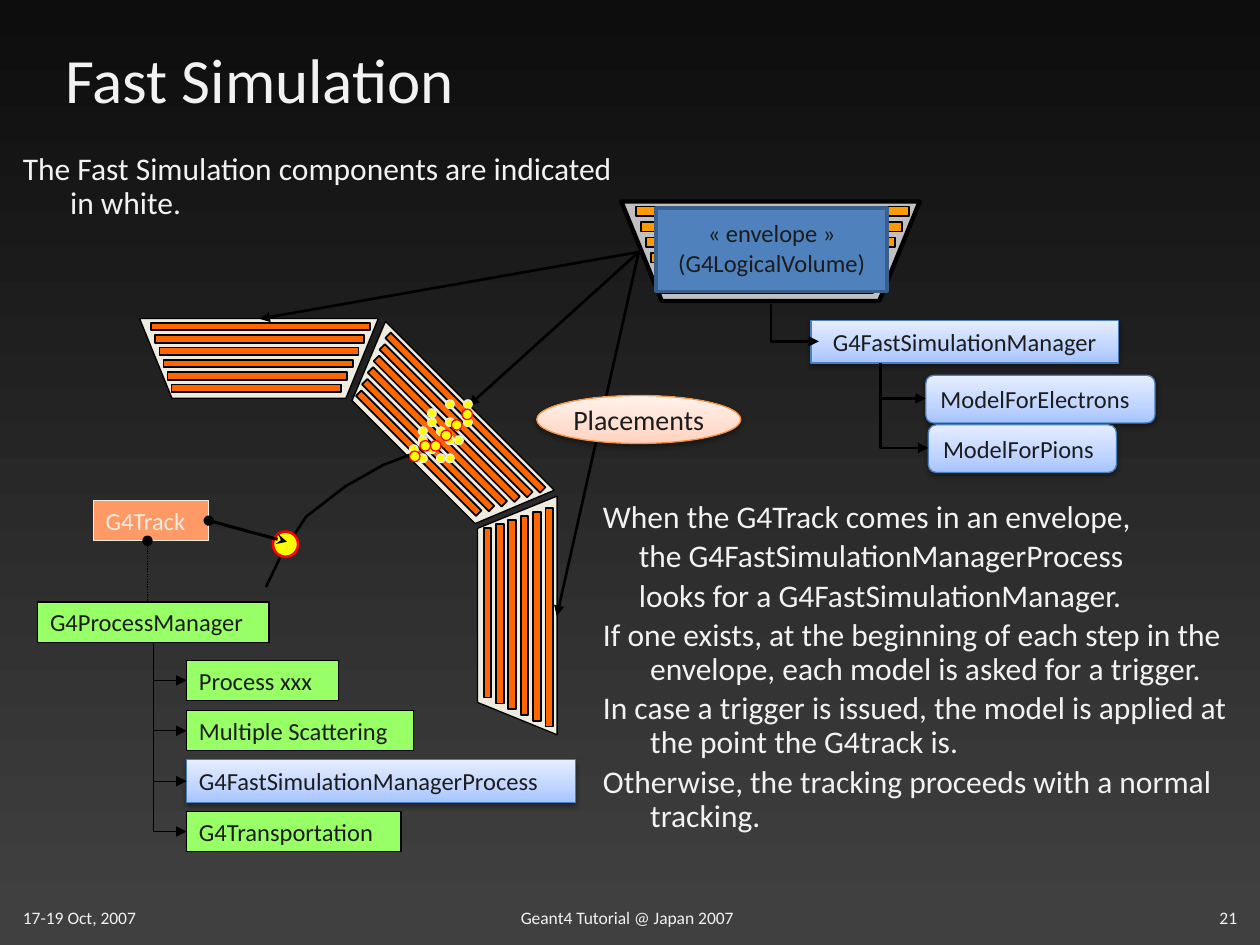
from copy import deepcopy
from dataclasses import dataclass
from math import cos, radians, sin

from pptx import Presentation
from pptx.dml.color import RGBColor
from pptx.enum.dml import MSO_LINE
from pptx.enum.shapes import MSO_CONNECTOR as Link, MSO_SHAPE as Preset
from pptx.enum.text import MSO_ANCHOR as Anchor, PP_ALIGN as Align
from pptx.oxml import parse_xml
from pptx.oxml.ns import nsdecls, qn
from pptx.util import Pt


@dataclass(frozen=True)
class Theme:
    font: str = "Calibri"
    light: str = "F2F2F2"
    dark: str = "1C1C1C"
    black: str = "000000"
    cream: str = "EEECE1"
    silver: str = "C0C0C0"
    orange: str = "FF6600"
    amber: str = "FF9900"
    salmon: str = "FF9966"
    green: str = "99FF66"
    yellow: str = "FFFF00"
    red: str = "FF0000"
    blue: str = "4F81BD"
    navy: str = "3A5F8C"
    model_edge: str = "4B7EBC"
    label_edge: str = "F69240"
    backdrop: tuple = ((3, "404040"), (100, "0D0D0D"))
    model_fill: tuple = ((0, "A4C4FF"), (35, "BFD4FF"), (100, "E6EEFF"))
    label_fill: tuple = ((0, "FFD2BD"), (35, "FFDED0"), (100, "FFF2ED"))
    title: int = 36
    body: int = 18
    label: int = 16
    box: int = 14
    footer: int = 10


THEME = Theme()
MODEL = dict(fill=THEME.model_fill, edge=THEME.model_edge)
PROCESS = dict(fill=THEME.green, edge=THEME.black)
SHADOW = (
    f'<a:effectLst {nsdecls("a")}><a:outerShdw blurRad="40000" dist="20000" dir="5400000" '
    'rotWithShape="0"><a:srgbClr val="000000"><a:alpha val="38000"/></a:srgbClr>'
    "</a:outerShdw></a:effectLst>"
)


def rgb(code):
    return RGBColor.from_string(code)


def paint_gradient(fill, owner, stops):
    """Fill with a bottom-to-top gradient of (percent, colour) stops."""
    fill.gradient()
    fill.gradient_angle = 90
    stop_list = next(owner.iter(qn("a:gsLst")))
    while len(stop_list) < len(stops):
        stop_list.insert(1, deepcopy(stop_list[0]))
    for stop, (percent, colour) in zip(fill.gradient_stops, stops):
        stop.position = percent / 100
        stop.color.rgb = rgb(colour)


def write(frame, *lines, size=THEME.body, colour=THEME.light, align=Align.LEFT,
          anchor=Anchor.TOP, insets=(7.2, 3.6), leading=None, gap=0, indents=None):
    """Write one paragraph per line; indents holds (margin, first line) pairs."""
    frame.word_wrap = True
    frame.vertical_anchor = anchor
    frame.margin_left = frame.margin_right = Pt(insets[0])
    frame.margin_top = frame.margin_bottom = Pt(insets[1])
    for index, line in enumerate(lines):
        paragraph = frame.add_paragraph() if index else frame.paragraphs[0]
        paragraph.alignment = align
        paragraph.line_spacing = leading
        if index:
            paragraph.space_before = Pt(gap)
        if indents:
            margin, first = indents[index]
            properties = paragraph._p.get_or_add_pPr()
            properties.set("marL", str(Pt(margin)))
            properties.set("indent", str(Pt(first)))
        run = paragraph.add_run()
        run.text = line
        run.font.name, run.font.size = THEME.font, Pt(size)
        run.font.color.rgb = rgb(colour)


def text_box(slide, left, top, width, height, *lines, **style):
    """Add plain text on the backdrop."""
    box = slide.shapes.add_textbox(Pt(left), Pt(top), Pt(width), Pt(height))
    write(box.text_frame, *lines, **style)


def finish(shape, fill, edge, weight):
    """Give a shape its fill and outline; gradient shapes cast a shadow."""
    shape.shadow.inherit = False
    if fill is None:
        shape.fill.background()
    elif isinstance(fill, str):
        shape.fill.solid()
        shape.fill.fore_color.rgb = rgb(fill)
    else:
        properties = shape._element.spPr
        paint_gradient(shape.fill, properties, fill)
        properties.replace(properties.find(qn("a:effectLst")), parse_xml(SHADOW))
    shape.line.color.rgb = rgb(edge)
    shape.line.width = Pt(weight)


def block(slide, left, top, width, height, *lines, preset=Preset.RECTANGLE,
          fill, edge, weight=0.75, **style):
    """Add a preset shape with optional text."""
    shape = slide.shapes.add_shape(preset, Pt(left), Pt(top), Pt(width), Pt(height))
    finish(shape, fill, edge, weight)
    if lines:
        write(shape.text_frame, *lines, **{
            "size": THEME.box, "colour": THEME.dark, "anchor": Anchor.MIDDLE, **style})
    return shape


def outline(slide, points, fill, edge, weight, closed):
    """Add a freeform through the given points."""
    corners = [(Pt(x), Pt(y)) for x, y in points]
    builder = slide.shapes.build_freeform(*corners[0])
    builder.add_line_segments(corners[1:], close=closed)
    shape = builder.convert_to_shape()
    finish(shape, fill, edge, weight)
    return shape


def calorimeter(slide, x, y, angle=0, scale=1, body=THEME.cream, layer=THEME.orange, weight=0.75):
    """Draw a trapezoid of six layers centred on (x, y)."""
    half_width, half_height, slant = 68.2 * scale, 22.75 * scale, 18.5 * scale
    corners = [(x - half_width, y - half_height), (x - half_width + slant, y + half_height),
               (x + half_width - slant, y + half_height), (x + half_width, y - half_height)]
    outline(slide, corners, body, THEME.black, weight, True).rotation = angle
    turn, thickness = radians(angle), 4.4 * scale
    for index in reversed(range(6)):
        length = (125 - 5.6 * index) * scale
        across, down = (1 - 0.5 * index) * scale, (7.05 * index - 18.2) * scale
        centre_x = x + across * cos(turn) - down * sin(turn)
        centre_y = y + across * sin(turn) + down * cos(turn)
        block(slide, centre_x - length / 2, centre_y - thickness / 2, length, thickness,
              fill=layer, edge=THEME.black, weight=1).rotation = angle


def style_line(link, weight, head=None, tail=None):
    """Make a connector black and shadowless, with its line ends."""
    link.line.color.rgb = rgb(THEME.black)
    link.line.width = Pt(weight)
    properties = link._element.spPr
    for tag, kind in (("headEnd", head), ("tailEnd", tail)):
        if kind:
            properties.find(qn("a:ln")).append(
                parse_xml(f'<a:{tag} {nsdecls("a")} type="{kind}"/>'))
    properties.append(parse_xml(f'<a:effectLst {nsdecls("a")}/>'))


def straight(slide, start, end, weight=1.5, **ends):
    """Add a straight connector."""
    link = slide.shapes.add_connector(Link.STRAIGHT, *map(Pt, (*start, *end)))
    style_line(link, weight, **ends)
    return link


def branch(slide, start, end, weight):
    """Add an arrow that runs down and then right."""
    across, down = end[0] - start[0], end[1] - start[1]
    left = (start[0] + end[0] - down) / 2
    top = (start[1] + end[1] - across) / 2
    link = slide.shapes.add_connector(Link.ELBOW, *map(Pt, (left, top, left + down, top + across)))
    properties = link._element.spPr
    properties.find(qn("a:prstGeom")).set("prst", "bentConnector2")
    frame = properties.find(qn("a:xfrm"))
    frame.set("rot", "16200000")
    frame.set("flipH", "1")
    style_line(link, weight, tail="triangle")


def add_texts(slide):
    """Add the title, the two statements and the footer."""
    title = slide.shapes.title
    title.left, title.top, title.width, title.height = map(Pt, (30, 12, 612, 66))
    write(title.text_frame, "Fast Simulation", size=THEME.title, anchor=Anchor.MIDDLE)
    text_box(slide, 6, 514.8, 81, 19.4, "17-19 Oct, 2007", size=THEME.footer)
    text_box(slide, 290.5, 514.8, 140, 19.4, "Geant4 Tutorial @ Japan 2007", size=THEME.footer)
    text_box(slide, 660, 514.8, 54, 25, "21", size=THEME.footer, align=Align.RIGHT)
    hanging, inner = (27, -27), (20.5, 0)
    text_box(slide, 6, 84, 354, 66, "The Fast Simulation components are indicated in white.",
             leading=0.9, indents=[hanging])
    text_box(slide, 337.5, 283, 390, 240,
             "When the G4Track comes in an envelope,",
             "the G4FastSimulationManagerProcess",
             "looks for a G4FastSimulationManager.",
             "If one exists, at the beginning of each step in the envelope, "
             "each model is asked for a trigger.",
             "In case a trigger is issued, the model is applied at the point the G4track is.",
             "Otherwise, the tracking proceeds with a normal tracking.",
             leading=0.9, gap=3, indents=[hanging, inner, inner] + [hanging] * 3)


def add_envelope(slide):
    """Add the envelope with its manager and models."""
    block(slide, 463.5, 183, 175.5, 24.5, "G4FastSimulationManager", align=Align.CENTER, **MODEL)
    for name, left, top, width in (("ModelForElectrons", 529, 214.5, 131),
                                   ("ModelForPions", 530.5, 242.8, 107.5)):
        block(slide, left, top, width, 27.2, name, preset=Preset.ROUNDED_RECTANGLE, **MODEL)
        branch(slide, (503.3, 207.4), (left, top + 13.2), 1.5)
    branch(slide, (440.5, 173.5), (468, 195.1), 1.5)
    calorimeter(slide, 440.3, 143.6, scale=1.25, body=THEME.silver, layer=THEME.amber, weight=2.5)
    block(slide, 375, 119, 132, 47.5, "«\u00a0envelope\u00a0»".replace("\u00a0", " "),
          "(G4LogicalVolume)", fill=THEME.blue, edge=THEME.navy, weight=2,
          align=Align.CENTER, leading=0.9, gap=2)


def add_detector(slide):
    """Add the placed calorimeters and the particle path."""
    for x, y, angle in ((295.6, 351.7, 90), (252.4, 248, 45), (148, 204.8, 0)):
        calorimeter(slide, x, y, angle)
    for target in ((148.3, 182.2), (267.8, 231.8), (318.2, 352)):
        straight(slide, (365, 144), target, tail="triangle")
    path_points = [(152, 335.5), (161.3, 316), (175, 295.2), (197.3, 278), (219, 265.7), (234, 260)]
    outline(slide, path_points, None, THEME.black, 1.5, False)


def add_tracking(slide):
    """Add the track, its process manager and the processes."""
    track = block(slide, 53.3, 286, 66, 23, "G4Track", fill=THEME.salmon, edge=THEME.cream,
                  colour=THEME.cream)
    block(slide, 21.5, 344, 132.3, 23, "G4ProcessManager", **PROCESS)
    owner = straight(slide, (84.3, 309), (84.3, 344), 0.75, head="oval")
    owner.line.dash_style = MSO_LINE.ROUND_DOT
    processes = (("Process xxx", 87, 23, PROCESS), ("Multiple Scattering", 129.6, 23, PROCESS),
                 ("G4FastSimulationManagerProcess", 222.3, 24.5, MODEL),
                 ("G4Transportation", 122.6, 23, PROCESS))
    for index, (name, width, height, look) in enumerate(processes):
        middle = 388.8 + 28.8 * index
        block(slide, 106.6, middle - height / 2, width, height, name, **look)
        branch(slide, (87.8, 367.2), (106.6, middle), 0.75)
    block(slide, 156, 303.8, 14.4, 14.4, preset=Preset.OVAL, fill=THEME.yellow,
          edge=THEME.red, weight=1.5)
    pointer = straight(slide, (119.3, 297.5), (164, 309.6), 1.75, head="oval", tail="stealth")
    pointer.begin_connect(track, 3)


def add_shower(slide):
    """Add the shower dots on a lattice and the hits along the track."""
    rows = ((4, 6), (2,), (2, 4, 6), (1, 3), (1, 4, 5), (0, 2), (1, 3, 4))
    dot = dict(preset=Preset.OVAL, fill=THEME.yellow)
    for row, columns in enumerate(rows):
        for column in columns:
            block(slide, 234 + 5.15 * column, 228.5 + 5.15 * row, 5, 5, edge=THEME.cream, **dot)
    for column, rise in enumerate((0, 1, 1, 2, 3, 4)):
        block(slide, 234 + 6 * column, 257.8 - 6 * rise, 6, 6, edge=THEME.red, **dot)


def main():
    deck = Presentation()
    deck.slide_width, deck.slide_height = Pt(720), Pt(540)
    slide = deck.slides.add_slide(deck.slide_layouts[5])
    paint_gradient(slide.background.fill, slide._element, THEME.backdrop)
    add_texts(slide)
    add_envelope(slide)
    add_detector(slide)
    add_tracking(slide)
    block(slide, 306.7, 226, 116.6, 27.4, "Placements", preset=Preset.OVAL,
          fill=THEME.label_fill, edge=THEME.label_edge, size=THEME.label,
          align=Align.CENTER, insets=(1.4, 0.7))
    add_shower(slide)
    deck.save("out.pptx")


if __name__ == "__main__":
    main()
